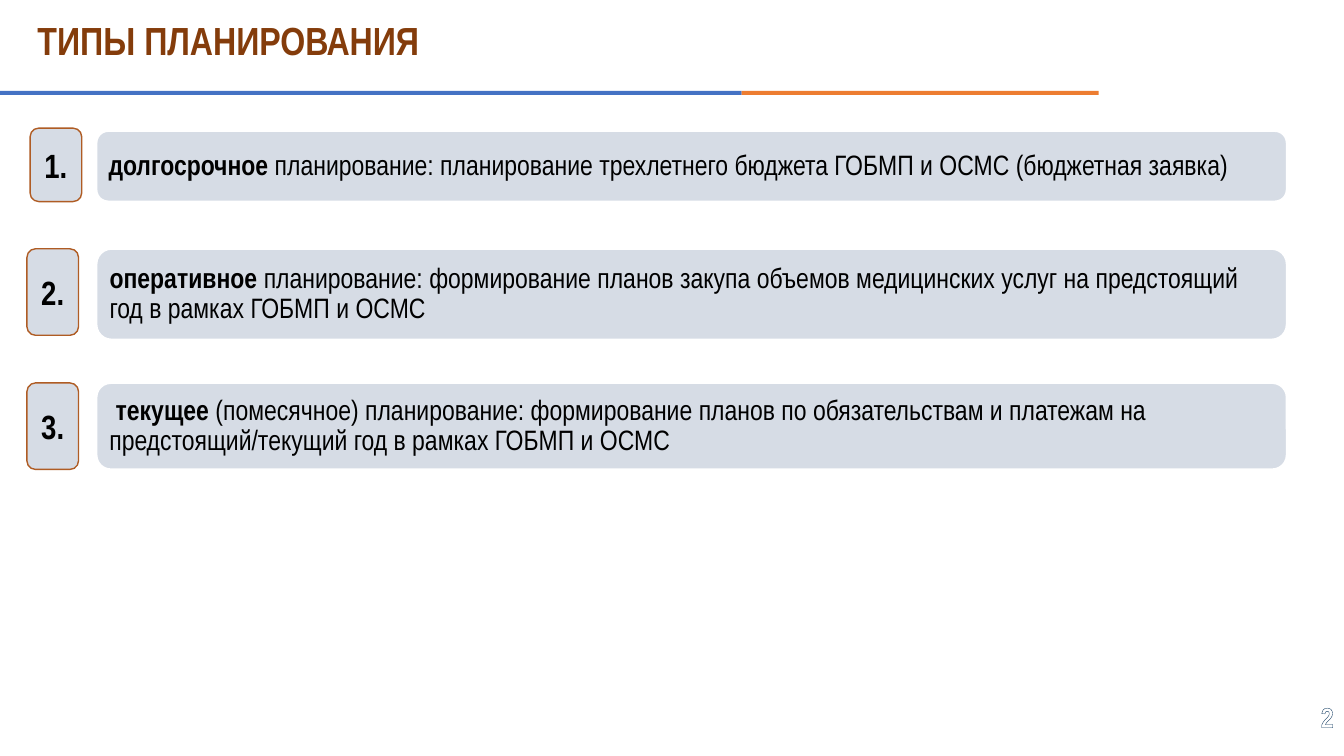
"""Build the slide on the three types of planning."""
import pptx
import pptx.dml.color
import pptx.enum.shapes
import pptx.enum.text
import pptx.util
from lxml import etree

Cm = pptx.util.Cm
Pt = pptx.util.Pt
RGBColor = pptx.dml.color.RGBColor
Shapes = pptx.enum.shapes.MSO_SHAPE
Align = pptx.enum.text.PP_ALIGN
Anchor = pptx.enum.text.MSO_ANCHOR

TITLE = "ТИПЫ ПЛАНИРОВАНИЯ"
PAGE_NUMBER = "2"
TYPES = [
    {"badge": (0.76, 3.23, 1.3, 1.85), "card": (3.3, 1.78),
     "text": ("", "долгосрочное", " планирование: планирование трехлетнего бюджета "
              "ГОБМП и ОСМС (бюджетная заявка)")},
    {"badge": (0.68, 6.27, 1.3, 2.18), "card": (6.27, 2.29),
     "text": ("", "оперативное", " планирование: формирование планов закупа объемов "
              "медицинских услуг на предстоящий год в рамках ГОБМП и ОСМС")},
    {"badge": (0.68, 9.65, 1.3, 2.18), "card": (9.65, 2.18),
     "text": (" ", "текущее", " (помесячное) планирование: формирование планов по "
              "обязательствам и платежам на предстоящий/текущий год в рамках ГОБМП и ОСМС")},
]

BLUE = RGBColor(0x44, 0x72, 0xC4)
ORANGE = RGBColor(0xED, 0x7D, 0x31)
BROWN = RGBColor(0x84, 0x3C, 0x0B)
RUST = RGBColor(0xAF, 0x5C, 0x24)
GREY = RGBColor(0xD6, 0xDC, 0xE5)
NAVY = RGBColor(0x0E, 0x38, 0x5E)
WHITE = RGBColor(0xFF, 0xFF, 0xFF)
BLACK = RGBColor(0, 0, 0)

FACE = "Arial Narrow"
CARD_LEFT, CARD_WIDTH, CARD_INSET = 2.43, 30, 0.22
RULES = [(0, 18.69, BLUE), (18.69, 9, ORANGE)]
RULE_TOP, RULE_HEIGHT = 2.29, 0.1


def apply(target, values):
    for name, value in values.items():
        setattr(target, name, value)


def add_span(para, text, size, color, bold=True):
    span = para.add_run()
    span.text = text
    apply(span.font, {"size": Pt(size), "bold": bold, "name": FACE})
    span.font.color.rgb = color
    return span


def add_box(page, kind, place, fill, line=None, width=1):
    box = page.shapes.add_shape(kind, *map(Cm, place))
    box.shadow.inherit = False
    box.fill.solid()
    box.fill.fore_color.rgb = fill
    if line is None:
        box.line.fill.background()
    else:
        box.line.color.rgb = line
        box.line.width = Pt(width)
    apply(box.text_frame, {"word_wrap": True, "vertical_anchor": Anchor.MIDDLE})
    return box


def add_header(page):
    for left, width, color in RULES:
        add_box(page, Shapes.RECTANGLE, (left, RULE_TOP, width, RULE_HEIGHT), color)

    title = page.shapes.title
    apply(title, {"left": Cm(0.69), "top": Cm(0), "width": Cm(27.66), "height": Cm(1.73)})
    apply(title.text_frame, {"vertical_anchor": Anchor.BOTTOM, "word_wrap": True,
                             "auto_size": pptx.enum.text.MSO_AUTO_SIZE.NONE})
    para = title.text_frame.paragraphs[0]
    apply(para, {"alignment": Align.LEFT, "line_spacing": 0.9})
    add_span(para, TITLE, 28, BROWN)


def add_type(page, number, kind):
    top, height = kind["card"]
    card = add_box(page, Shapes.ROUNDED_RECTANGLE,
                   (CARD_LEFT, top, CARD_WIDTH, height), GREY, WHITE, 1.5)
    apply(card.text_frame, {"margin_left": Cm(CARD_INSET), "margin_right": Cm(CARD_INSET)})
    para = card.text_frame.paragraphs[0]
    apply(para, {"alignment": Align.LEFT, "line_spacing": 0.9})
    lead, term, meaning = kind["text"]
    for text, bold in ((lead, False), (term, True), (meaning, False)):
        if text:
            add_span(para, text, 20, BLACK, bold)

    badge = add_box(page, Shapes.ROUNDED_RECTANGLE, kind["badge"], GREY, RUST)
    para = badge.text_frame.paragraphs[0]
    para.alignment = Align.CENTER
    add_span(para, f"{number}.", 24, BLACK)


def add_page_number(page):
    box = page.shapes.add_textbox(Cm(26.47), Cm(17.7), Cm(7.39), Cm(0.71))
    apply(box.text_frame, {"word_wrap": True, "vertical_anchor": Anchor.MIDDLE})
    para = box.text_frame.paragraphs[0]
    para.alignment = Align.RIGHT
    span = add_span(para, PAGE_NUMBER, 20, WHITE)
    space = "http://schemas.openxmlformats.org/drawingml/2006/main"
    outline = etree.fromstring(
        f'<a:ln xmlns:a="{space}" w="0"><a:solidFill><a:srgbClr val="{NAVY}"/>'
        "</a:solidFill></a:ln>")
    span.font._element.insert(0, outline)


def main():
    deck = pptx.Presentation()
    apply(deck, {"slide_width": Cm(33.87), "slide_height": Cm(19.05)})
    page = deck.slides.add_slide(deck.slide_layouts[5])
    add_header(page)
    for number, kind in enumerate(TYPES, 1):
        add_type(page, number, kind)
    add_page_number(page)
    deck.save("out.pptx")


if __name__ == "__main__":
    main()
